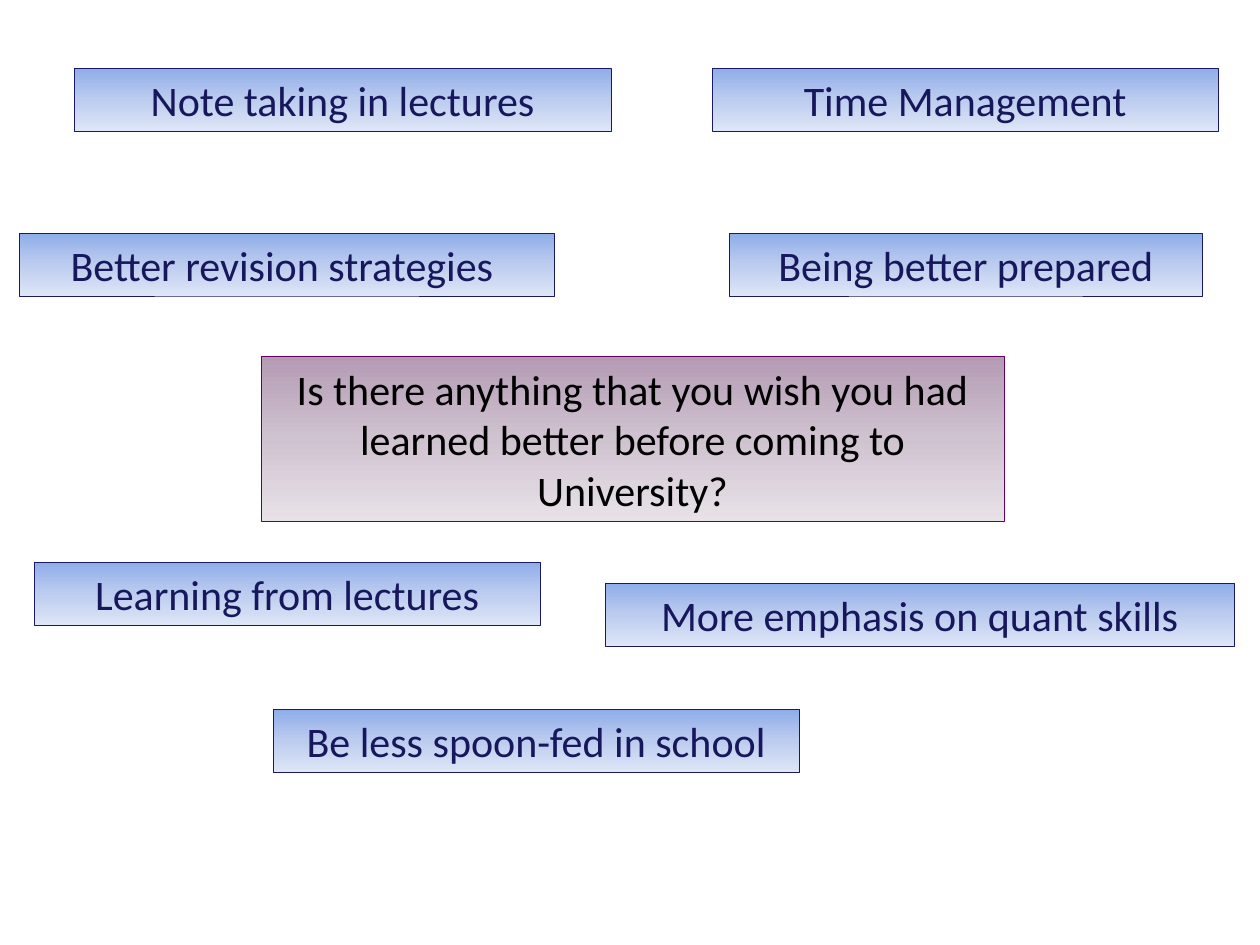
"""Build a slide with a central question surrounded by student answers."""
import copy
from dataclasses import dataclass

import pptx
import pptx.dml.color
import pptx.enum.shapes
import pptx.enum.text
import pptx.oxml.ns
import pptx.util
from pptx.util import Inches

COLORS = {
    "question_top": "B49BB4",
    "question_middle": "D0C3D0",
    "question_bottom": "E8E2E8",
    "question_line": "660066",
    "question_text": "000000",
    "answer_top": "8FADE9",
    "answer_middle": "BCCCEF",
    "answer_bottom": "DEE6F7",
    "answer_line": "191966",
    "answer_text": "17175C",
}
ANSWER_HEIGHT = 0.5


@dataclass
class Box:
    text: str
    left: float
    top: float
    width: float
    height: float = ANSWER_HEIGHT
    role: str = "answer"


QUESTION = Box(
    "Is there anything that you wish you had learned better before coming to University?",
    2.07, 2.83, 5.9, 1.31, "question",
)
ANSWERS = [
    Box("Note taking in lectures", 0.59, 0.54, 4.26),
    Box("Being better prepared", 5.79, 1.85, 3.75),
    Box("Learning from lectures", 0.27, 4.46, 4.02),
    Box("Time Management", 5.65, 0.54, 4.02),
    Box("Better revision strategies ", 0.15, 1.85, 4.25),
    Box("Be less spoon-fed in school", 2.17, 5.63, 4.17),
    Box("More emphasis on quant skills", 4.8, 4.63, 5),
]


def color(role: str, part: str) -> pptx.dml.color.RGBColor:
    return pptx.dml.color.RGBColor.from_string(COLORS[f"{role}_{part}"])


def fill_gradient(shape, role: str) -> None:
    shape.fill.gradient()
    shape.fill.gradient_angle = 270
    stop_list = next(shape._element.spPr.iter(pptx.oxml.ns.qn("a:gsLst")))
    stop_list.insert(1, copy.deepcopy(stop_list[0]))
    parts = ("top", "middle", "bottom")
    for index, (stop, part) in enumerate(zip(shape.fill.gradient_stops, parts)):
        stop.position = index / 2
        stop.color.rgb = color(role, part)


def draw_box(slide, box: Box) -> None:
    shape = slide.shapes.add_shape(
        pptx.enum.shapes.MSO_SHAPE.RECTANGLE,
        Inches(box.left), Inches(box.top), Inches(box.width), Inches(box.height),
    )
    shape.shadow.inherit = False
    fill_gradient(shape, box.role)
    shape.line.color.rgb = color(box.role, "line")
    shape.line.width = pptx.util.Pt(0.25)

    frame = shape.text_frame
    frame.word_wrap = True
    if box.role == "question":
        frame.vertical_anchor = pptx.enum.text.MSO_ANCHOR.MIDDLE
    else:
        frame.vertical_anchor = pptx.enum.text.MSO_ANCHOR.TOP
        frame.auto_size = pptx.enum.text.MSO_AUTO_SIZE.SHAPE_TO_FIT_TEXT
    paragraph = frame.paragraphs[0]
    paragraph.text = box.text
    paragraph.alignment = pptx.enum.text.PP_ALIGN.CENTER
    paragraph.font.name = "Calibri"
    paragraph.font.size = pptx.util.Pt(24)
    paragraph.font.color.rgb = color(box.role, "text")


def main() -> None:
    presentation = pptx.Presentation()
    presentation.slide_width = Inches(10)
    presentation.slide_height = Inches(7.5)
    slide = presentation.slides.add_slide(presentation.slide_layouts[6])
    for box in [QUESTION, *ANSWERS]:
        draw_box(slide, box)
    presentation.save("out.pptx")


if __name__ == "__main__":
    main()
